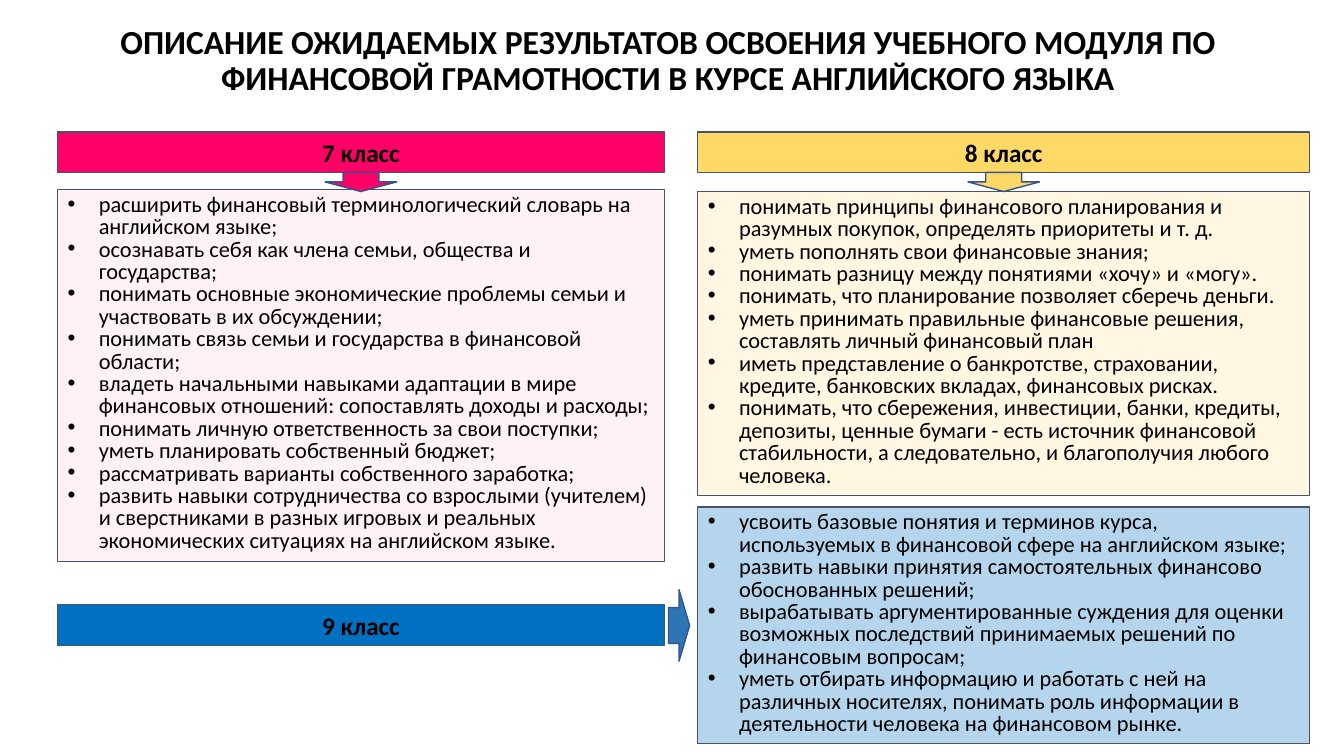
from dataclasses import dataclass

from lxml import etree
from pptx import Presentation
from pptx.dml.color import RGBColor
from pptx.enum.shapes import MSO_SHAPE
from pptx.enum.text import MSO_ANCHOR, MSO_AUTO_SIZE, PP_ALIGN
from pptx.oxml.ns import qn
from pptx.util import Inches, Pt

RECT, ARROW = MSO_SHAPE.RECTANGLE, MSO_SHAPE.DOWN_ARROW
TOP, MIDDLE = MSO_ANCHOR.TOP, MSO_ANCHOR.MIDDLE
LEFT, CENTER = PP_ALIGN.LEFT, PP_ALIGN.CENTER
FIXED = MSO_AUTO_SIZE.NONE

TITLE = ("ОПИСАНИЕ ОЖИДАЕМЫХ РЕЗУЛЬТАТОВ ОСВОЕНИЯ УЧЕБНОГО МОДУЛЯ ПО "
         "ФИНАНСОВОЙ ГРАМОТНОСТИ В КУРСЕ АНГЛИЙСКОГО ЯЗЫКА")
GOALS_7 = [
    "расширить финансовый терминологический словарь на английском языке;",
    "осознавать себя как члена семьи, общества и государства;",
    "понимать основные экономические проблемы семьи и участвовать в их обсуждении;",
    "понимать связь семьи и государства в финансовой области;",
    "владеть начальными навыками адаптации в мире финансовых отношений: "
    "сопоставлять доходы и расходы;",
    "понимать личную ответственность за свои поступки;",
    "уметь планировать собственный бюджет;",
    "рассматривать варианты собственного заработка;",
    "развить навыки сотрудничества со взрослыми (учителем) и сверстниками в разных "
    "игровых и реальных экономических ситуациях на английском языке.",
]
GOALS_8 = [
    "понимать принципы финансового планирования и разумных покупок, "
    "определять приоритеты и т. д.",
    "уметь пополнять свои финансовые знания;",
    "понимать разницу между понятиями «хочу» и «могу».",
    "понимать, что планирование позволяет сберечь деньги.",
    "уметь принимать правильные финансовые решения, составлять личный финансовый план",
    "иметь представление о банкротстве, страховании, кредите, банковских вкладах, "
    "финансовых рисках.",
    "понимать, что сбережения, инвестиции, банки, кредиты, депозиты, ценные бумаги - "
    "есть источник финансовой стабильности, а следовательно, и благополучия любого человека.",
]
GOALS_9 = [
    "усвоить базовые понятия и терминов курса, используемых в финансовой сфере "
    "на английском языке;",
    "развить навыки принятия самостоятельных финансово обоснованных решений;",
    "вырабатывать аргументированные суждения для оценки возможных последствий "
    "принимаемых решений по финансовым вопросам;",
    "уметь отбирать информацию и работать с ней на различных носителях, понимать роль "
    "информации в деятельности человека на финансовом рынке.",
]


@dataclass(frozen=True)
class Theme:
    font: str = "Calibri"
    ink: str = "000000"
    edge: str = "44546A"
    rim: str = "325491"
    pink: str = "FF0066"
    gold: str = "FFD966"
    cream: str = "FFE699"
    blue: str = "0070C0"
    steel: str = "2E75B6"
    title: int = 24
    head: int = 18
    body: int = 16


T = Theme()
COLS = [(0.57, 6.02), (6.92, 6.07)]
HEAD_Y, HEAD_H = 1.31, 0.4
WIDE, TALL = 0.71, 0.19
INDENT = 0.31

# fmt: off
GRADES = [
    {"name": "7 класс", "col": 0, "y": HEAD_Y, "fill": T.pink, "goals": GOALS_7,
     "box": (0, 1.88, 3.69), "tint": T.pink, "alpha": 5},
    {"name": "8 класс", "col": 1, "y": HEAD_Y, "fill": T.gold, "goals": GOALS_8,
     "box": (1, 1.9, 3.02), "tint": T.cream, "alpha": 29},
    {"name": "9 класс", "col": 0, "y": 6, "fill": T.blue, "goals": GOALS_9,
     "box": (1, 5.03, 2.35), "tint": T.blue, "alpha": 29},
]
# fmt: on


def write(frame, text, size=T.body, bold=False, align=LEFT, anchor=TOP,
          space=None, bullet=False):
    frame.word_wrap, frame.auto_size = True, FIXED
    frame.vertical_anchor = anchor
    lines = [text] if isinstance(text, str) else text
    for i, line in enumerate(lines):
        para = frame.paragraphs[0] if i == 0 else frame.add_paragraph()
        para.alignment = align
        para.line_spacing = space
        para.space_before = para.space_after = Pt(0)
        run = para.add_run()
        run.text = line
        font = run.font
        font.name, font.size, font.bold = T.font, Pt(size), bold
        font.color.rgb = RGBColor.from_string(T.ink)
        if bullet:
            props = para._p.get_or_add_pPr()
            props.set("marL", str(Inches(INDENT)))
            props.set("indent", str(-Inches(INDENT)))
            etree.SubElement(props, qn("a:buFont")).set("typeface", "Arial")
            etree.SubElement(props, qn("a:buChar")).set("char", "•")


def place(shape, x, y, w, h):
    shape.left, shape.top = Inches(x), Inches(y)
    shape.width, shape.height = Inches(w), Inches(h)


def paint(shape, fill, line=T.edge, width=0.75, alpha=None):
    shape.fill.solid()
    shape.fill.fore_color.rgb = RGBColor.from_string(fill)
    shape.line.color.rgb = RGBColor.from_string(line)
    shape.line.width = Pt(width)
    if alpha:
        color = shape.fill._xPr.find(qn("a:solidFill"))[0]
        etree.SubElement(color, qn("a:alpha")).set("val", str(alpha * 1000))


def draw(slide, kind, x, y, w, h, fill, **line):
    shape = slide.shapes.add_shape(kind, Inches(x), Inches(y), Inches(w), Inches(h))
    shape.shadow.inherit = False
    paint(shape, fill, **line)
    return shape


def main():
    deck = Presentation()
    deck.slide_width, deck.slide_height = Inches(13.33), Inches(7.5)
    slide = deck.slides.add_slide(deck.slide_layouts[4])
    title, *slots = slide.placeholders
    place(title, 0.26, 0, 12.73, 1.22)
    write(title.text_frame, TITLE, size=T.title, bold=True, align=CENTER,
          anchor=MIDDLE, space=0.9)

    for grade, slot in zip(GRADES, slots):
        x, w = COLS[grade["col"]]
        head = draw(slide, RECT, x, grade["y"], w, HEAD_H, grade["fill"])
        write(head.text_frame, grade["name"], size=T.head, bold=True,
              align=CENTER, anchor=MIDDLE)

        col, y, h = grade["box"]
        left, wide = COLS[col]
        place(slot, left, y, wide, h)
        paint(slot, grade["tint"], alpha=grade["alpha"])
        write(slot.text_frame, grade["goals"], space=Pt(16), bullet=True)

        if col == grade["col"]:
            draw(slide, ARROW, x + (w - WIDE) / 2, HEAD_Y + HEAD_H, WIDE, TALL,
                 grade["fill"], line=T.rim, width=1)
        else:
            mid = (x + w + left) / 2 - 0.02
            side = draw(slide, ARROW, mid - WIDE / 2, grade["y"] + 0.1, WIDE, 0.21,
                        T.steel, line=T.rim, width=1)
            side.rotation = 270

    for spare in slots[len(GRADES):]:
        spare.element.getparent().remove(spare.element)
    deck.save("out.pptx")


if __name__ == "__main__":
    main()
